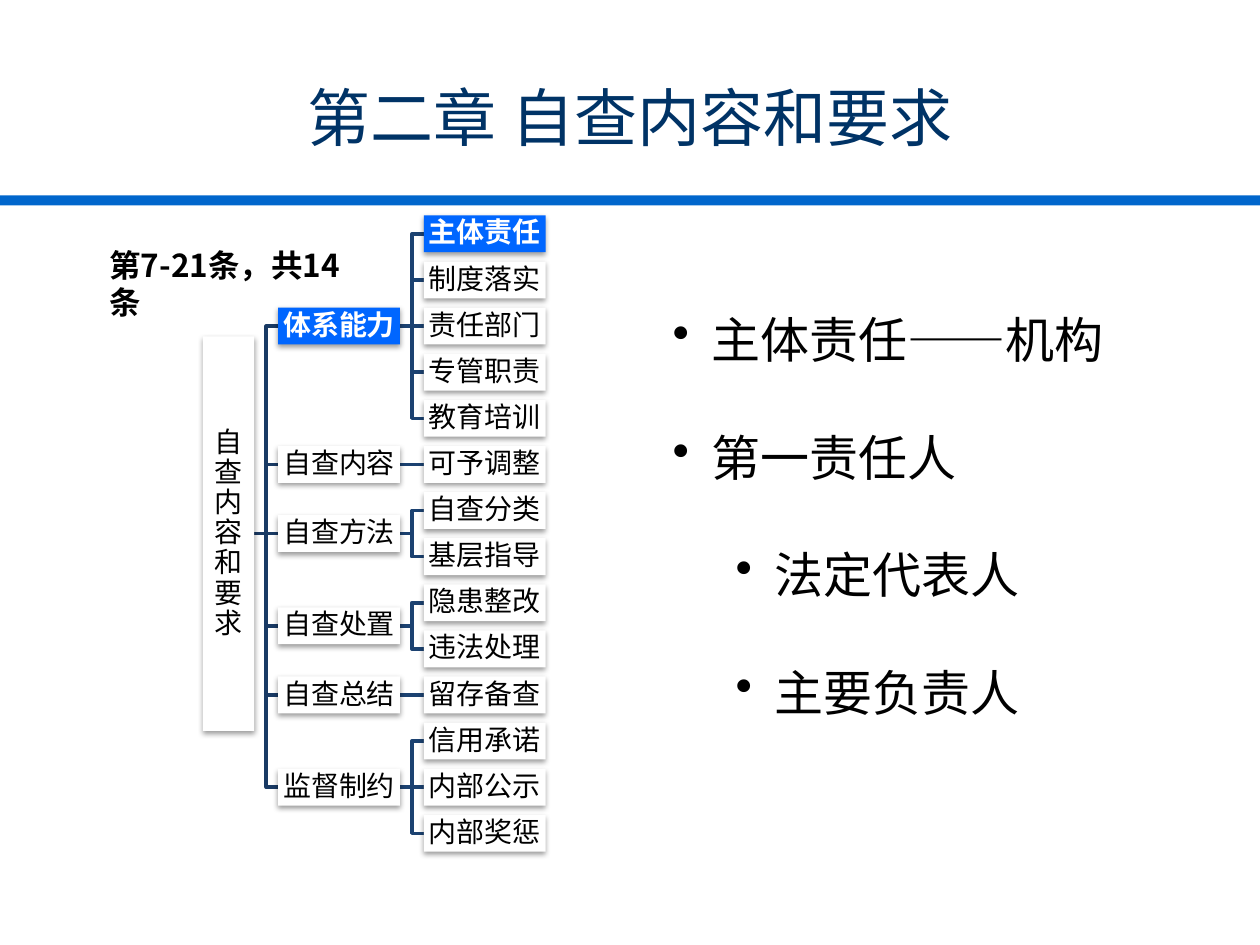
from lxml.etree import SubElement
from pptx import Presentation
from pptx.dml.color import RGBColor
from pptx.enum.shapes import MSO_CONNECTOR, MSO_SHAPE
from pptx.enum.text import MSO_ANCHOR, PP_ALIGN
from pptx.oxml.ns import qn
from pptx.util import Inches, Pt

FONT = "Noto Sans CJK SC"
BLACK = RGBColor(0x00, 0x00, 0x00)
WHITE = RGBColor(0xFF, 0xFF, 0xFF)
NAVY = RGBColor(0x00, 0x33, 0x66)
RULE_BLUE = RGBColor(0x00, 0x66, 0xCC)
HIGHLIGHT = RGBColor(0x00, 0x66, 0xFF)
ROOT_LINE = RGBColor(0x19, 0x3A, 0x64)
BRANCH_LINE = RGBColor(0x1C, 0x42, 0x71)

ROOT = "自查内容和要求"
BRANCHES = [
    ("体系能力", ["主体责任", "制度落实", "责任部门", "专管职责", "教育培训"]),
    ("自查内容", ["可予调整"]),
    ("自查方法", ["自查分类", "基层指导"]),
    ("自查处置", ["隐患整改", "违法处理"]),
    ("自查总结", ["留存备查"]),
    ("监督制约", ["信用承诺", "内部公示", "内部奖惩"]),
]
HIGHLIGHTED = {"体系能力", "主体责任"}
POINTS = [("主体责任——机构", 0), ("第一责任人", 0), ("法定代表人", 1), ("主要负责人", 1)]


def style(paragraph, size, color, bold=False):
    """Set the paragraph font for both Latin and East Asian text."""
    font = paragraph.font
    font.size, font.bold, font.name = Pt(size), bold, FONT
    font.color.rgb = color
    properties = paragraph._p.get_or_add_pPr().find(qn("a:defRPr"))
    SubElement(properties, qn("a:ea"), typeface=FONT)


def add_bullet(paragraph, indent, hanging):
    properties = paragraph._p.get_or_add_pPr()
    properties.set("marL", str(Inches(indent)))
    properties.set("indent", str(-Inches(hanging)))
    bullet = SubElement(properties, qn("a:buChar"), char="•")
    properties.find(qn("a:defRPr")).addprevious(bullet)


def add_soft_shadow(shape):
    shape.shadow.inherit = False
    effects = shape._element.spPr.find(qn("a:effectLst"))
    shadow = SubElement(effects, qn("a:outerShdw"), blurRad=str(Pt(3.1)),
                        dist=str(Pt(1.6)), dir="5400000", rotWithShape="0")
    color = SubElement(shadow, qn("a:srgbClr"), val=str(BLACK))
    SubElement(color, qn("a:alpha"), val="38000")


def add_rectangle(slide, box, fill):
    shape = slide.shapes.add_shape(MSO_SHAPE.RECTANGLE, *map(Inches, box))
    shape.shadow.inherit = False
    shape.fill.solid()
    shape.fill.fore_color.rgb = fill
    shape.line.fill.background()
    return shape


def add_node(slide, text, left, middle, width, height):
    """Add a tree node centred vertically on middle."""
    marked = text in HIGHLIGHTED
    shape = add_rectangle(slide, (left, middle - height / 2, width, height),
                          HIGHLIGHT if marked else WHITE)
    add_soft_shadow(shape)
    frame = shape.text_frame
    frame.word_wrap = True
    frame.vertical_anchor = MSO_ANCHOR.MIDDLE
    frame.margin_left = frame.margin_right = Inches(0.01)
    frame.margin_top = frame.margin_bottom = Inches(0.01)
    paragraph = frame.paragraphs[0]
    paragraph.text = text
    paragraph.alignment = PP_ALIGN.CENTER
    paragraph.line_spacing = 0.9
    style(paragraph, 16, WHITE if marked else BLACK, marked)


def add_link(slide, start_x, start_y, end_x, end_y, color):
    """Join two nodes: straight on one level, otherwise with an elbow."""
    if abs(start_y - end_y) < 0.01:
        link = slide.shapes.add_connector(
            MSO_CONNECTOR.STRAIGHT, *map(Inches, (start_x, start_y, end_x, end_y)))
        SubElement(link._element.spPr, qn("a:effectLst"))
    else:
        bend = (start_x + end_x) / 2
        builder = slide.shapes.build_freeform(Inches(start_x), Inches(start_y))
        corners = [(bend, start_y), (bend, end_y), (end_x, end_y)]
        builder.add_line_segments(
            [(Inches(x), Inches(y)) for x, y in corners], close=False)
        link = builder.convert_to_shape()
        link.fill.background()
        link.shadow.inherit = False
    link.line.color.rgb = color
    link.line.width = Pt(2)


def add_tree(slide, left, top, width, height):
    """Draw the tree with one row per leaf and three columns."""
    leaf_count = sum(len(leaves) for _, leaves in BRANCHES)
    node_share = 0.8
    row = height / (leaf_count - 1 + node_share)
    node_height = row * node_share
    root_width, gap = 0.15 * width, 0.07 * width
    node_width = (width - root_width - 2 * gap) / 2
    branch_left = left + root_width + gap
    leaf_left = left + width - node_width
    root_middle = top + height / 2

    nodes = [(ROOT, left, root_middle, root_width, 0.62 * height)]
    first_row = 0
    for branch, leaves in BRANCHES:
        first_middle = top + node_height / 2 + first_row * row
        branch_middle = first_middle + (len(leaves) - 1) * row / 2
        add_link(slide, left + root_width, root_middle,
                 branch_left, branch_middle, ROOT_LINE)
        nodes.append((branch, branch_left, branch_middle, node_width, node_height))
        for index, leaf in enumerate(leaves):
            middle = first_middle + index * row
            add_link(slide, branch_left + node_width, branch_middle,
                     leaf_left, middle, BRANCH_LINE)
            nodes.append((leaf, leaf_left, middle, node_width, node_height))
        first_row += len(leaves)
    for node in nodes:
        add_node(slide, *node)


def add_title(slide, left, top, width, height):
    title = slide.shapes.title
    title.left, title.top = Inches(left), Inches(top)
    title.width, title.height = Inches(width), Inches(height)
    title.text_frame.vertical_anchor = MSO_ANCHOR.MIDDLE
    paragraph = title.text_frame.paragraphs[0]
    paragraph.text = "第二章 自查内容和要求"
    paragraph.alignment = PP_ALIGN.CENTER
    style(paragraph, 36, NAVY)


def add_caption(slide, *box):
    frame = slide.shapes.add_textbox(*map(Inches, box)).text_frame
    frame.word_wrap = True
    paragraph = frame.paragraphs[0]
    paragraph.text = "第7-21条，共14条"
    style(paragraph, 18, BLACK, bold=True)


def add_points(slide, *box):
    frame = slide.shapes.add_textbox(*map(Inches, box)).text_frame
    frame.word_wrap = True
    for index, (text, level) in enumerate(POINTS):
        paragraph = frame.add_paragraph() if index else frame.paragraphs[0]
        paragraph.text = text
        paragraph.level = level
        paragraph.line_spacing = 2.0
        style(paragraph, 28, BLACK)
        add_bullet(paragraph, 0.31 + 0.5 * level, 0.31)


def main():
    presentation = Presentation()
    presentation.slide_width, presentation.slide_height = Inches(10), Inches(7.5)
    slide = presentation.slides.add_slide(presentation.slide_layouts[5])
    add_tree(slide, 1.61, 1.71, 2.72, 5.05)
    add_title(slide, 0.5, 0.57, 9, 0.71)
    add_rectangle(slide, (0, 1.55, 10, 0.08), RULE_BLUE)
    add_points(slide, 5.24, 1.94, 3.72, 3.87)
    add_caption(slide, 0.77, 1.9, 2.26, 0.4)
    presentation.save("out.pptx")


if __name__ == "__main__":
    main()
